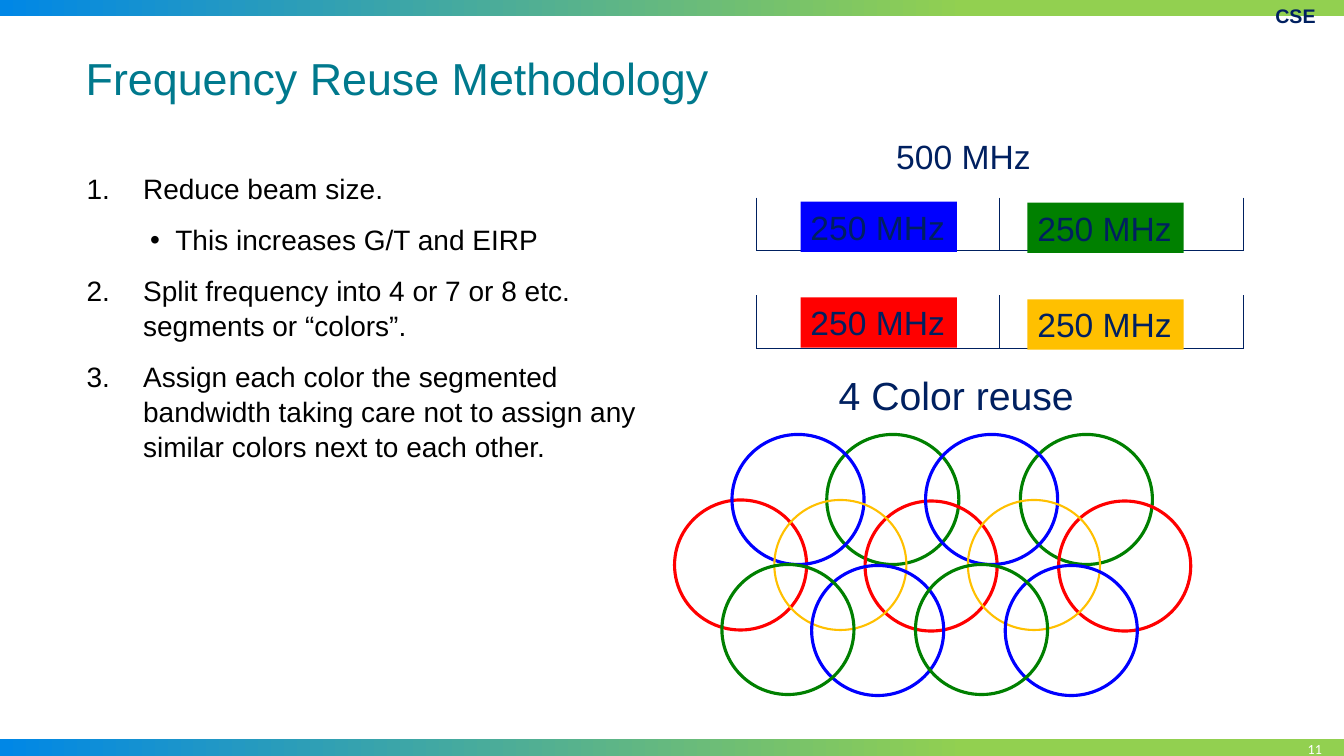
from dataclasses import dataclass

from lxml.etree import SubElement
from pptx import Presentation
from pptx.dml.color import RGBColor
from pptx.enum.shapes import MSO_CONNECTOR, MSO_SHAPE
from pptx.enum.text import MSO_ANCHOR, PP_ALIGN
from pptx.oxml.ns import qn
from pptx.util import Inches, Pt

NAVY, TEAL, BLACK, WHITE = "002060", "00798D", "000000", "FFFFFF"
BLUE, RED, GREEN, AMBER = "0000FF", "FF0000", "008000", "FFC000"
SKY, LIME = "0087E6", "92D050"


@dataclass
class Label:
    text: str
    left: float
    top: float
    width: float
    height: float
    size: float
    color: str = NAVY
    fill: str = ""
    font: str = "Arial"
    bold: bool = False
    wrap: bool = False
    align: PP_ALIGN = PP_ALIGN.LEFT
    anchor: MSO_ANCHOR = MSO_ANCHOR.TOP
    inset_x: float = 0.1
    inset_y: float = 0.05


@dataclass
class Beam:
    left: float
    top: float
    color: str
    weight: float = 2.25


@dataclass
class Step:
    text: str
    level: int = 0


def rgb(color: str) -> RGBColor:
    return RGBColor.from_string(color)


def style_runs(paragraph, size: float, color: str, font: str, bold: bool = False) -> None:
    for run in paragraph.runs:
        run.font.size = Pt(size)
        run.font.name = font
        run.font.bold = bold
        run.font.color.rgb = rgb(color)


def set_frame(frame, inset_x: float, inset_y: float, wrap: bool, anchor: MSO_ANCHOR) -> None:
    frame.word_wrap = wrap
    frame.vertical_anchor = anchor
    frame.margin_left = frame.margin_right = Inches(inset_x)
    frame.margin_top = frame.margin_bottom = Inches(inset_y)


def add_label(slide, label: Label) -> None:
    place = [Inches(v) for v in (label.left, label.top, label.width, label.height)]
    if label.fill:
        box = slide.shapes.add_shape(MSO_SHAPE.RECTANGLE, *place)
        box.shadow.inherit = False
        box.fill.solid()
        box.fill.fore_color.rgb = rgb(label.fill)
        box.line.fill.background()
    else:
        box = slide.shapes.add_textbox(*place)
    frame = box.text_frame
    frame.text = label.text
    set_frame(frame, label.inset_x, label.inset_y, label.wrap, label.anchor)
    paragraph = frame.paragraphs[0]
    paragraph.alignment = label.align
    style_runs(paragraph, label.size, label.color, label.font, label.bold)


def add_band(slide, top: float, height: float) -> None:
    band = slide.shapes.add_shape(
        MSO_SHAPE.RECTANGLE, 0, Inches(top), Inches(13.33), Inches(height))
    band.shadow.inherit = False
    band.line.fill.background()
    band.fill.gradient()
    band.fill.gradient_angle = 0
    for stop, color, position in zip(band.fill.gradient_stops, (SKY, LIME), (0, 0.72)):
        stop.color.rgb = rgb(color)
        stop.position = position


def add_rule(slide, x1: float, y1: float, x2: float, y2: float) -> None:
    rule = slide.shapes.add_connector(
        MSO_CONNECTOR.STRAIGHT, Inches(x1), Inches(y1), Inches(x2), Inches(y2))
    rule.line.color.rgb = rgb(NAVY)
    rule.line.width = Pt(0.75)
    SubElement(rule.element.spPr, qn("a:effectLst"))


def add_spectrum(slide, top: float) -> None:
    left, middle, right, bottom = 7.5, 9.91, 12.33, top + 0.53
    for x in (left, middle, right):
        add_rule(slide, x, top, x, bottom)
    add_rule(slide, left, bottom, right, bottom)


def add_beam(slide, beam: Beam) -> None:
    circle = slide.shapes.add_shape(
        MSO_SHAPE.OVAL, Inches(beam.left), Inches(beam.top), Inches(1.31), Inches(1.29))
    circle.shadow.inherit = False
    circle.fill.background()
    circle.line.color.rgb = rgb(beam.color)
    circle.line.width = Pt(beam.weight)


def add_steps(slide, steps: list[Step]) -> None:
    frame = slide.shapes.add_textbox(
        Inches(0.78), Inches(1.64), Inches(5.67), Inches(4.95)).text_frame
    set_frame(frame, 0.08, 0.05, True, MSO_ANCHOR.TOP)
    for index, step in enumerate(steps):
        paragraph = frame.add_paragraph() if index else frame.paragraphs[0]
        paragraph.text = step.text
        paragraph.level = step.level
        paragraph.line_spacing = 1.05
        paragraph.space_before = Pt(4 if index else 0)
        paragraph.space_after = Pt(7)
        properties = paragraph._p.get_or_add_pPr()
        margin, indent = (0.88, -0.25) if step.level else (0.56, -0.56)
        properties.set("marL", str(Inches(margin)))
        properties.set("indent", str(Inches(indent)))
        if step.level:
            SubElement(properties, qn("a:buFont"), typeface="Arial")
            SubElement(properties, qn("a:buChar"), char="•")
        else:
            SubElement(properties, qn("a:buFont"), typeface="+mj-lt")
            SubElement(properties, qn("a:buAutoNum"), type="arabicPeriod")
        style_runs(paragraph, 20, BLACK, "Arial")


STEPS = [
    Step("Reduce beam size."),
    Step("This increases G/T and EIRP", 1),
    Step("Split frequency into 4 or 7 or 8 etc. segments or “colors”."),
    Step("Assign each color the segmented bandwidth taking care not to assign any "
         "similar colors next to each other."),
]

LABELS = [
    Label("11", 10.43, 7.28, 2.76, 0.3, 10, WHITE, font="Calibri", wrap=True,
          align=PP_ALIGN.RIGHT, anchor=MSO_ANCHOR.MIDDLE, inset_x=0.08, inset_y=0.04),
    Label("Frequency Reuse Methodology", 0.77, 0.4, 12.12, 0.52, 32, TEAL,
          wrap=True, inset_x=0.08, inset_y=0.1),
    Label("500 MHz", 8.79, 1.3, 1.55, 0.5, 24),
    Label("4 Color reuse", 8.22, 3.63, 2.57, 0.57, 28),
    Label("CSE", 12.55, -0.01, 0.78, 0.36, 14, bold=True),
]

SEGMENTS = [(7.94, 2.0, BLUE), (7.94, 2.95, RED), (10.19, 2.01, GREEN), (10.19, 2.97, AMBER)]

EDGE_BEAM = Beam(6.69, 4.96, RED)
CLUSTER = [
    Beam(8.2, 4.31, GREEN),
    Beam(8.58, 4.97, RED),
    Beam(7.26, 4.31, BLUE),
    Beam(7.68, 4.96, AMBER, 1.5),
    Beam(8.05, 5.61, BLUE),
    Beam(7.16, 5.6, GREEN),
]
CLUSTER_PITCH = 1.92


def main() -> None:
    deck = Presentation()
    deck.slide_width, deck.slide_height = Inches(13.33), Inches(7.5)
    slide = deck.slides.add_slide(deck.slide_layouts[6])
    add_band(slide, 7.33, 0.17)
    add_band(slide, 0, 0.16)
    add_steps(slide, STEPS)
    add_beam(slide, EDGE_BEAM)
    for repeat in range(2):
        for beam in CLUSTER:
            left = beam.left + repeat * CLUSTER_PITCH
            add_beam(slide, Beam(left, beam.top, beam.color, beam.weight))
    for top in (1.96, 2.93):
        add_spectrum(slide, top)
    for left, top, color in SEGMENTS:
        add_label(slide, Label("250 MHz", left, top, 1.55, 0.5, 24, fill=color))
    for label in LABELS:
        add_label(slide, label)
    deck.save("out.pptx")


if __name__ == "__main__":
    main()
